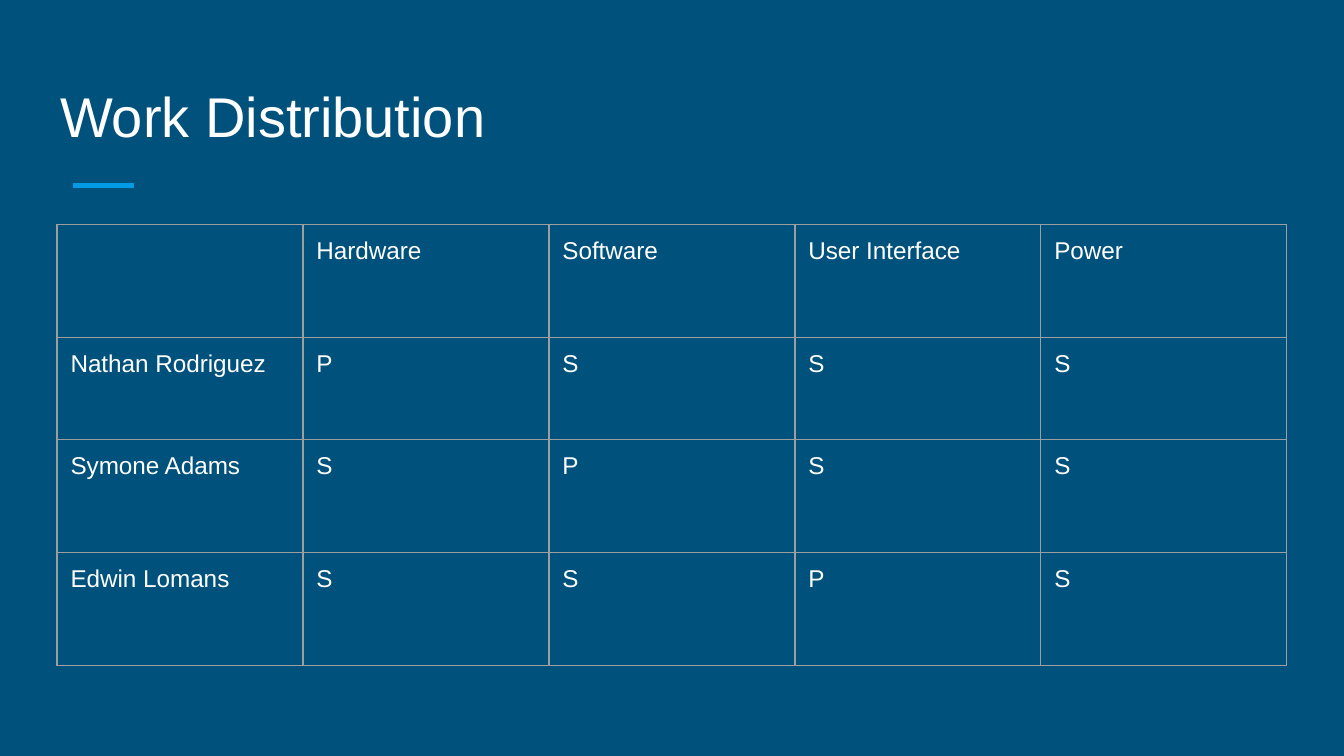
from lxml.etree import SubElement
from pptx import Presentation
from pptx.dml.color import RGBColor
from pptx.enum.shapes import MSO_CONNECTOR
from pptx.oxml.ns import qn
from pptx.util import Inches, Pt

# Content
TITLE = "Work Distribution"
WORK_ROWS = [
    ["", "Hardware", "Software", "User Interface", "Power"],
    ["Nathan Rodriguez", "P", "S", "S", "S"],
    ["Symone Adams", "S", "P", "S", "S"],
    ["Edwin Lomans", "S", "S", "P", "S"],
]
ROW_HEIGHTS = [0.84, 0.76, 0.84, 0.84]
PAGE_WIDTH, COLUMN_WIDTH = 10, 1.83
NAVY, SKY, WHITE, GREY = "00517C", "039BE5", "FFFFFF", "9E9E9E"


def color(value):
    return RGBColor.from_string(value)


def write(holder, text, size=13, font="Arial", fill=WHITE, inset_x=0.1, inset_y=0.1):
    """Put formatted text into a text frame or a table cell."""
    holder.margin_left = holder.margin_right = Inches(inset_x)
    holder.margin_top = holder.margin_bottom = Inches(inset_y)
    frame = getattr(holder, "text_frame", holder)
    para = frame.paragraphs[0]
    para.font.size = Pt(size)
    if text:
        span = para.add_run()
        span.text = text
        span.font.size = Pt(size)
        span.font.name = font
        span.font.color.rgb = color(fill)


def add_borders(cell, line_color, width):
    properties = cell._tc.get_or_add_tcPr()
    for position, edge in enumerate(("lnL", "lnR", "lnT", "lnB")):
        line = SubElement(properties, qn(f"a:{edge}"), w=str(Pt(width)))
        solid = SubElement(line, qn("a:solidFill"))
        SubElement(solid, qn("a:srgbClr"), val=line_color)
        properties.insert(position, line)  # borders precede the fill


# Page in 16:9
deck = Presentation()
deck.slide_width = Inches(PAGE_WIDTH)
deck.slide_height = Inches(PAGE_WIDTH * 9 / 16)
page = deck.slides.add_slide(deck.slide_layouts[6])
page.background.fill.solid()
page.background.fill.fore_color.rgb = color(NAVY)

# Accent line
accent = page.shapes.add_connector(
    MSO_CONNECTOR.STRAIGHT, Inches(0.54), Inches(1.38), Inches(1), Inches(1.38))
accent.line.color.rgb = color(SKY)
accent.line.width = Pt(3)
SubElement(accent._element.spPr, qn("a:effectLst"))

# Title
title_box = page.shapes.add_textbox(Inches(0.35), Inches(0.56), Inches(5), Inches(1.08))
title_box.text_frame.word_wrap = True
write(title_box.text_frame, TITLE, size=30, inset_y=0.05)

# Work table, centred across the page
table_width = COLUMN_WIDTH * len(WORK_ROWS[0])
table = page.shapes.add_table(
    len(WORK_ROWS), len(WORK_ROWS[0]),
    Inches((PAGE_WIDTH - table_width) / 2), Inches(1.67),
    Inches(table_width), Inches(sum(ROW_HEIGHTS))).table
table.first_row = table.horz_banding = False
for column in table.columns:
    column.width = Inches(COLUMN_WIDTH)
for row, height, texts in zip(table.rows, ROW_HEIGHTS, WORK_ROWS):
    row.height = Inches(height)
    for cell, text in zip(row.cells, texts):
        write(cell, text)
        cell.fill.background()
        add_borders(cell, GREY, 0.75)

deck.save("out.pptx")
